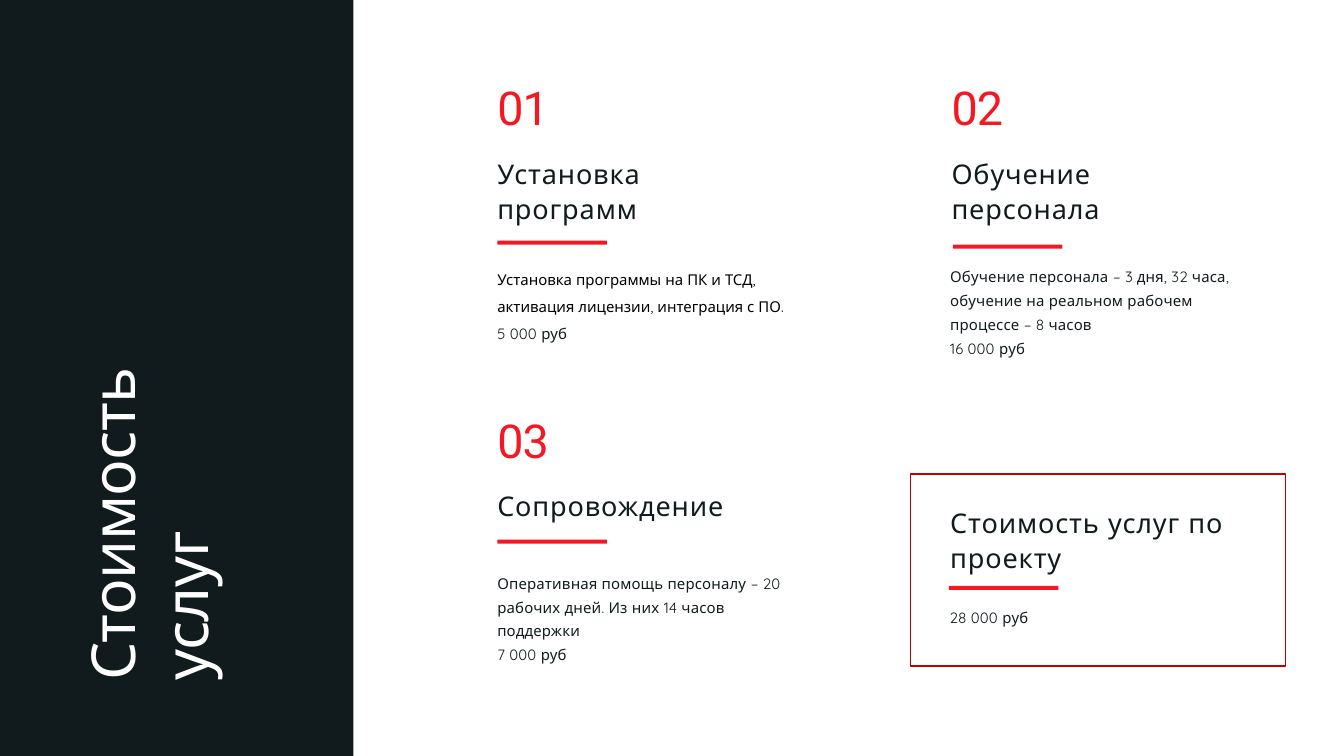
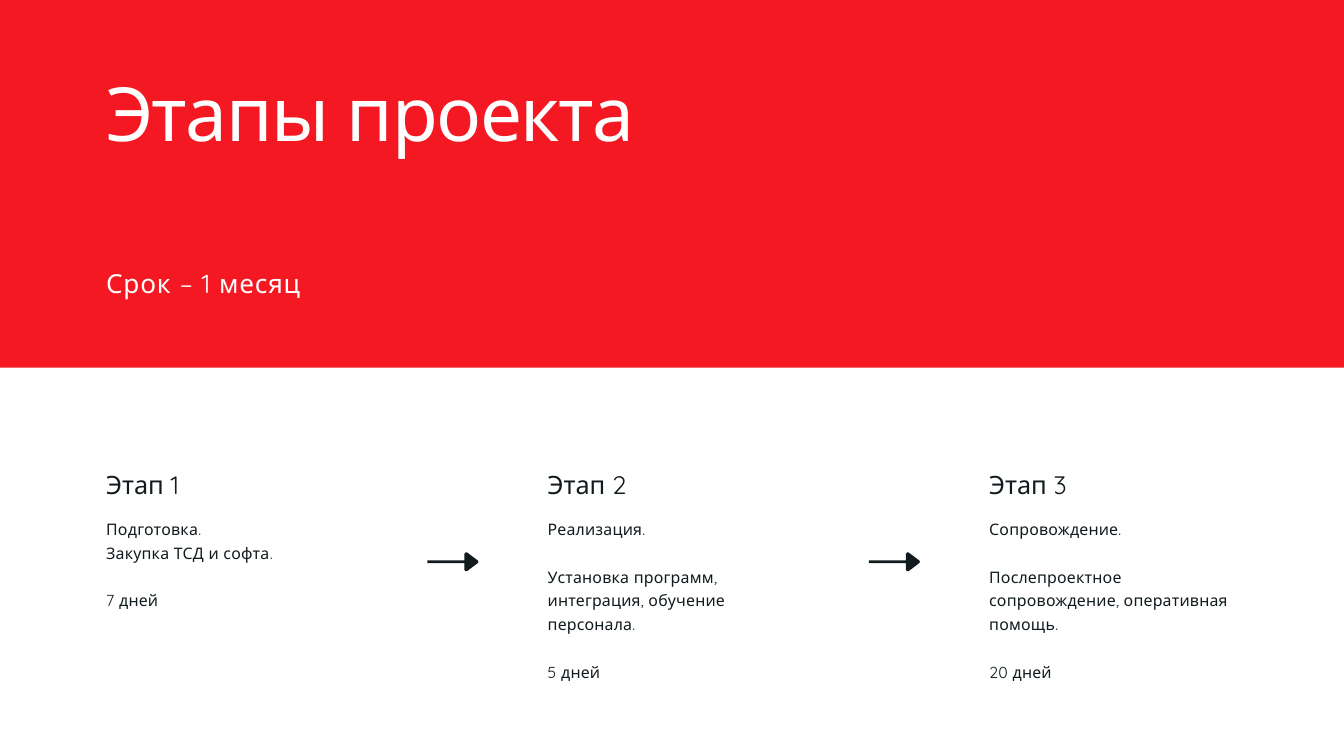
from pptx import Presentation
from pptx.dml.color import RGBColor
from pptx.enum.shapes import MSO_SHAPE
from pptx.enum.text import PP_ALIGN
from pptx.util import Inches, Pt

RECTANGLE = MSO_SHAPE.RECTANGLE
LEFT = PP_ALIGN.LEFT
JUSTIFY = PP_ALIGN.JUSTIFY

RED = RGBColor(0xF4, 0x18, 0x23)
FRAME_RED = RGBColor(0xC0, 0x00, 0x00)
INK = RGBColor(0x11, 0x1B, 0x1E)
BLACK = RGBColor(0x00, 0x00, 0x00)
WHITE = RGBColor(0xFF, 0xFF, 0xFF)

TEXT_FONT = "Quicksand"
NUMBER_FONT = "Roboto"
BODY_LINE = Pt(25.5)
HEADING_LINE = Pt(37.7)
COLUMN_WIDTH = 4.3
STAGE_LEFT = 1.58
STAGE_STEP = 6.57
ARROW_LEFT = 6.36
ARROW_OUTLINE = [
    (0, 0.12), (0.55, 0.12), (0.55, 0.02), (0.57, 0), (0.59, 0),
    (0.75, 0.12), (0.76, 0.14), (0.75, 0.16),
    (0.59, 0.28), (0.57, 0.28), (0.55, 0.26), (0.55, 0.16), (0, 0.16),
]


def add_slide(deck):
    page = deck.slides.add_slide(deck.slide_layouts[6])
    page.background.fill.solid()
    page.background.fill.fore_color.rgb = WHITE
    return page


def paint(shape, color):
    shape.shadow.inherit = False
    shape.fill.solid()
    shape.fill.fore_color.rgb = color
    shape.line.fill.background()


def add_band(page, left, top, width, height, color):
    band = page.shapes.add_shape(
        RECTANGLE, Inches(left), Inches(top), Inches(width), Inches(height))
    paint(band, color)


def add_frame(page, left, top, width, height):
    frame = page.shapes.add_shape(
        RECTANGLE, Inches(left), Inches(top), Inches(width), Inches(height))
    frame.shadow.inherit = False
    frame.fill.background()
    frame.line.color.rgb = FRAME_RED
    frame.line.width = Pt(2)


def add_paragraph(box, text, size, color, line, tracking=0, font=TEXT_FONT,
                  align=LEFT, before=0):
    frame = box.text_frame
    first = frame.paragraphs[0]
    para = frame.add_paragraph() if first.runs else first
    span = para.add_run()
    span.text = text
    if tracking:
        span._r.get_or_add_rPr().set("spc", str(round(tracking * 100)))
    para.alignment = align
    para.line_spacing = line
    if before:
        para.space_before = before
    para.font.name = font
    para.font.size = Pt(size)
    para.font.color.rgb = color


def add_box(page, left, top, width, height):
    box = page.shapes.add_textbox(
        Inches(left), Inches(top), Inches(width), Inches(height))
    frame = box.text_frame
    frame.word_wrap = True
    frame.margin_left = frame.margin_right = 0
    frame.margin_top = frame.margin_bottom = 0
    return box


def add_text(page, left, top, width, height, *style, **options):
    box = add_box(page, left, top, width, height)
    add_paragraph(box, *style, **options)
    return box


def add_number(page, left, top, number):
    add_text(page, left, top, 1.43, 0.79, number, 50, RED, Pt(55),
             tracking=-1, font=NUMBER_FONT)


def add_heading(page, left, top, height, text):
    add_text(page, left, top, COLUMN_WIDTH, height, text, 29, INK,
             HEADING_LINE, tracking=0.9)


def add_rule(page, left, top):
    add_band(page, left, top, 1.63, 0.06, RED)


def add_details(page, left, top, height, lines):
    box = add_box(page, left, top, COLUMN_WIDTH, height)
    for line in lines:
        add_paragraph(box, line, 16, INK, BODY_LINE, tracking=0.2)


def add_arrow(page, left, top):
    points = [(Inches(left + x), Inches(top + y)) for x, y in ARROW_OUTLINE]
    builder = page.shapes.build_freeform(*points[0], scale=1.0)
    builder.add_line_segments(points[1:], close=True)
    paint(builder.convert_to_shape(), INK)


def add_stage(page, left, number, groups):
    add_text(page, left, 6.95, 3.75, 0.45, f"Этап {number}", 27, INK,
             Pt(35.1), align=JUSTIFY)
    box = add_box(page, left, 7.66, 3.75, 2.55)
    for group_index, group in enumerate(groups):
        for line_index, line in enumerate(group):
            gap = BODY_LINE if group_index and not line_index else 0
            add_paragraph(box, line, 17, INK, BODY_LINE, tracking=0.2,
                          before=gap)


def build_prices(deck):
    page = add_slide(deck)
    add_frame(page, 13.55, 7.05, 5.58, 2.86)
    add_band(page, 0, 0, 5.26, 11.25, INK)
    title = add_text(page, -1.07, 5.76, 6.55, 2.19, "Стоимость услуг", 65,
                     WHITE, Pt(78), tracking=-0.7)
    title.rotation = 270

    add_number(page, 7.4, 1.25, "01")
    add_heading(page, 7.4, 2.3, 1.07, "Установка программ")
    add_rule(page, 7.4, 3.58)
    setup = add_text(
        page, 7.4, 3.9, COLUMN_WIDTH, 1.21,
        "Установка программы на ПК и ТСД, активация лицензии, "
        "интеграция с ПО.", 16, BLACK, 1.5)
    add_paragraph(setup, "5 000 руб", 16, INK, 1.5, tracking=0.2)

    add_number(page, 7.4, 6.2, "03")
    add_heading(page, 7.4, 7.25, 0.53, "Сопровождение")
    add_rule(page, 7.4, 8.03)
    add_details(page, 7.4, 8.46, 1.46, [
        "Оперативная помощь персоналу – 20 рабочих дней. "
        "Из них 14 часов поддержки",
        "7 000 руб"])

    add_number(page, 14.16, 1.25, "02")
    add_heading(page, 14.16, 2.3, 1.02, "Обучение персонала")
    add_rule(page, 14.18, 3.64)
    add_details(page, 14.14, 3.9, 1.46, [
        "Обучение персонала – 3 дня, 32 часа, "
        "обучение на реальном рабочем процессе – 8 часов",
        "16 000 руб"])

    add_heading(page, 14.14, 7.5, 1.07, "Стоимость услуг по проекту")
    add_rule(page, 14.12, 8.72)
    add_details(page, 14.13, 8.97, 0.36, ["28 000 руб"])


def build_stages(deck):
    page = add_slide(deck)
    add_band(page, 0, 0, 20, 5.47, RED)
    add_text(page, STAGE_LEFT, 1.1, 13.14, 1.23, "Этапы проекта", 80, WHITE,
             Pt(88), tracking=-1.6)
    add_text(page, STAGE_LEFT, 3.92, 7.41, 0.49, "Срок – 1 месяц", 28, WHITE,
             HEADING_LINE, tracking=0.9)
    stages = [
        [["Подготовка.", "Закупка ТСД и софта."], ["7 дней"]],
        [["Реализация."],
         ["Установка программ, интеграция, обучение персонала."],
         ["5 дней"]],
        [["Сопровождение."],
         ["Послепроектное сопровождение, оперативная помощь."],
         ["20 дней"]],
    ]
    for index, groups in enumerate(stages):
        add_stage(page, STAGE_LEFT + index * STAGE_STEP, index + 1, groups)
        if index:
            add_arrow(page, ARROW_LEFT + (index - 1) * STAGE_STEP, 8.22)


def main():
    deck = Presentation()
    deck.slide_width = Inches(20)
    deck.slide_height = Inches(11.25)
    build_prices(deck)
    build_stages(deck)
    deck.save("out.pptx")


if __name__ == "__main__":
    main()
